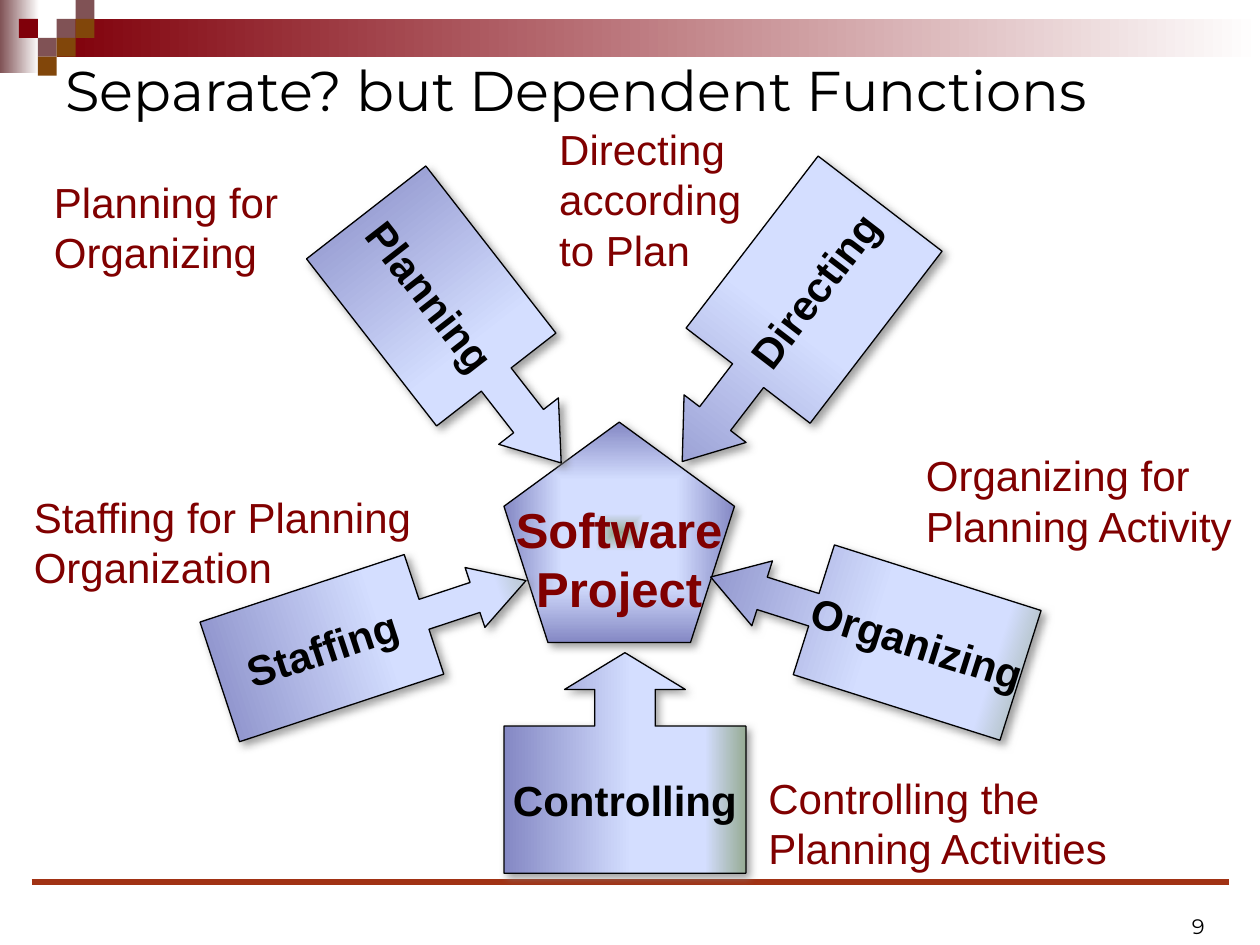
from dataclasses import dataclass

from pptx import Presentation
from pptx.dml.color import RGBColor
from pptx.enum.shapes import MSO_CONNECTOR, MSO_SHAPE as Shape
from pptx.enum.text import MSO_ANCHOR as Anchor, MSO_AUTO_SIZE as AutoSize, PP_ALIGN as Align
from pptx.oxml import parse_xml
from pptx.oxml.ns import nsdecls, qn
from pptx.util import Inches, Pt


@dataclass(frozen=True)
class Theme:
    heading_font: str = "Montserrat"
    body_font: str = "Arial"
    black: str = "000000"
    maroon: str = "800000"
    rule: str = "A13214"
    shadow: str = "808080"
    mauve: str = "805255"
    red: str = "80000A"
    brown: str = "81460A"
    white: str = "FFFFFF"
    arrow_stops: tuple = ((0, "8488C4"), (53, "D4DEFF"), (83, "D4DEFF"), (100, "96AB94"))
    hub_stops: tuple = ((0, "96AB94"), (17, "D4DEFF"), (47, "D4DEFF"), (100, "8488C4"))
    title_size: int = 32
    hub_size: int = 28
    label_size: int = 24
    number_size: int = 12


THEME = Theme()
LINEAR = '<a:lin ang="0" scaled="1"/>'
CENTRED = '<a:path path="rect"><a:fillToRect l="50000" t="50000" r="50000" b="50000"/></a:path>'
CELL = 0.15


def fill_gradient(shape, stops, direction=LINEAR):
    shape.fill.gradient()
    gradient = shape._element.spPr.find(qn("a:gradFill"))
    stop_xml = "".join(
        f'<a:gs pos="{position * 1000}"><a:srgbClr val="{color}"/></a:gs>'
        for position, color in stops
    )
    gradient.getparent().replace(gradient, parse_xml(
        f'<a:gradFill {nsdecls("a")} rotWithShape="1"><a:gsLst>{stop_xml}</a:gsLst>{direction}</a:gradFill>'
    ))


def cast_shadow(shape):
    shape.shadow.inherit = False
    effects = shape._element.spPr.find(qn("a:effectLst"))
    effects.append(parse_xml(
        f'<a:outerShdw {nsdecls("a")} blurRad="{Pt(5)}" dist="{Pt(3)}" dir="2700000" algn="ctr" '
        f'rotWithShape="0"><a:srgbClr val="{THEME.shadow}"><a:alpha val="75000"/></a:srgbClr></a:outerShdw>'
    ))


def write_text(shape, text, size, color=THEME.black, font=THEME.body_font,
               bold=False, align=Align.LEFT, anchor=Anchor.TOP, wrap=False):
    frame = shape.text_frame
    frame.word_wrap = wrap
    frame.vertical_anchor = anchor
    paragraph = frame.paragraphs[0]
    paragraph.alignment = align
    for index, line in enumerate(text.split("\n")):
        if index:
            paragraph.add_line_break()
        run = paragraph.add_run()
        run.text = line
        run.font.name = font
        run.font.size = Pt(size)
        run.font.bold = bold
        run.font.color.rgb = RGBColor.from_string(color)


def add_block(slide, left, top, width, height, color, end_color=None):
    block = slide.shapes.add_shape(
        Shape.RECTANGLE, Inches(left), Inches(top), Inches(width), Inches(height))
    block.shadow.inherit = False
    block.line.fill.background()
    if end_color:
        fill_gradient(block, ((0, color), (100, end_color)))
    else:
        block.fill.solid()
        block.fill.fore_color.rgb = RGBColor.from_string(color)


def add_text(slide, box, text, size, **style):
    textbox = slide.shapes.add_textbox(*map(Inches, box))
    write_text(textbox, text, size, **style)
    return textbox


def add_label(slide, left, top, width, height, text):
    label = add_text(slide, (left, top, width, height), text, THEME.label_size, color=THEME.maroon)
    label.text_frame.auto_size = AutoSize.SHAPE_TO_FIT_TEXT


def add_node(slide, kind, box, text, stops, direction=LINEAR, size=THEME.label_size, color=THEME.black):
    node = slide.shapes.add_shape(kind, *map(Inches, box))
    fill_gradient(node, stops, direction)
    node.line.color.rgb = RGBColor.from_string(THEME.black)
    node.line.width = Pt(0.75)
    cast_shadow(node)
    write_text(node, text, size, color=color, bold=True, align=Align.CENTER, anchor=Anchor.MIDDLE)
    return node


def add_callout(slide, kind, box, rotation, adjustments, text):
    callout = add_node(slide, kind, box, text, THEME.arrow_stops)
    callout.rotation = rotation
    for index, value in enumerate(adjustments):
        callout.adjustments[index] = value


def add_rule(slide):
    rule = slide.shapes.add_connector(
        MSO_CONNECTOR.STRAIGHT, Inches(0.25), Inches(7), Inches(9.75), Inches(7))
    rule.line.color.rgb = RGBColor.from_string(THEME.rule)
    rule.line.width = Pt(3)
    rule._element.spPr.append(parse_xml(f'<a:effectLst {nsdecls("a")}/>'))


def add_decoration(slide):
    add_block(slide, 0, 0, 0.31, 0.58, THEME.mauve, THEME.white)
    add_block(slide, 0.45, 0.15, 9.55, 0.3, THEME.red, THEME.white)
    checkers = (
        (3, 1, THEME.mauve), (4, 0, THEME.mauve), (4, 1, THEME.brown), (2, 2, THEME.mauve),
        (1, 1, THEME.red), (3, 2, THEME.brown), (2, 3, THEME.brown),
    )
    for column, row, color in checkers:
        add_block(slide, column * CELL, row * CELL, CELL, CELL, color)
    add_rule(slide)


def main():
    presentation = Presentation()
    presentation.slide_width = Inches(10)
    presentation.slide_height = Inches(7.5)
    slide = presentation.slides.add_slide(presentation.slide_layouts[6])

    add_decoration(slide)
    add_text(slide, (7.33, 7, 2.33, 0.5), "9", THEME.number_size, font=THEME.heading_font,
             align=Align.RIGHT, anchor=Anchor.BOTTOM, wrap=True)
    add_text(slide, (0.42, 0.33, 9, 0.75), "Separate? but Dependent Functions", THEME.title_size,
             font=THEME.heading_font, anchor=Anchor.MIDDLE, wrap=True)

    add_node(slide, Shape.REGULAR_PENTAGON, (4, 3.35, 1.83, 1.75), "Software\nProject",
             THEME.hub_stops, CENTRED, THEME.hub_size, THEME.maroon)
    right, left, up = (Shape.RIGHT_ARROW_CALLOUT, Shape.LEFT_ARROW_CALLOUT, Shape.UP_ARROW_CALLOUT)
    callouts = (
        (right, (2.42, 2.08, 2.52, 1.2), 52.1, (0.25, 0.25, 0.351, 0.667), "Planning"),
        (left, (4.91, 2.02, 2.58, 1.24), 307.5, (0.25, 0.25, 0.346, 0.667), "Directing"),
        (right, (1.68, 4.51, 2.56, 1), 341.7, (0.25, 0.25, 0.426, 0.667), "Staffing"),
        (left, (5.58, 4.43, 2.58, 1.08), 17.6, (0.25, 0.25, 0.397, 0.667), "Organizing"),
        (up, (4, 5.18, 1.92, 1.75), 0, (0.274, 0.274, 0.167, 0.667), "Controlling"),
    )
    for callout in callouts:
        add_callout(slide, *callout)

    labels = (
        (0.33, 1.35, 1.98, 0.9, "Planning for\nOrganizing"),
        (0.17, 3.85, 3.2, 0.9, "Staffing for Planning\nOrganization"),
        (4.34, 0.93, 1.74, 1.3, "Directing\naccording\nto Plan"),
        (7.25, 3.52, 2.65, 0.9, "Organizing for\nPlanning Activity"),
        (6, 6.08, 2.91, 0.9, "Controlling the\nPlanning Activities"),
    )
    for label in labels:
        add_label(slide, *label)

    presentation.save("out.pptx")


if __name__ == "__main__":
    main()
